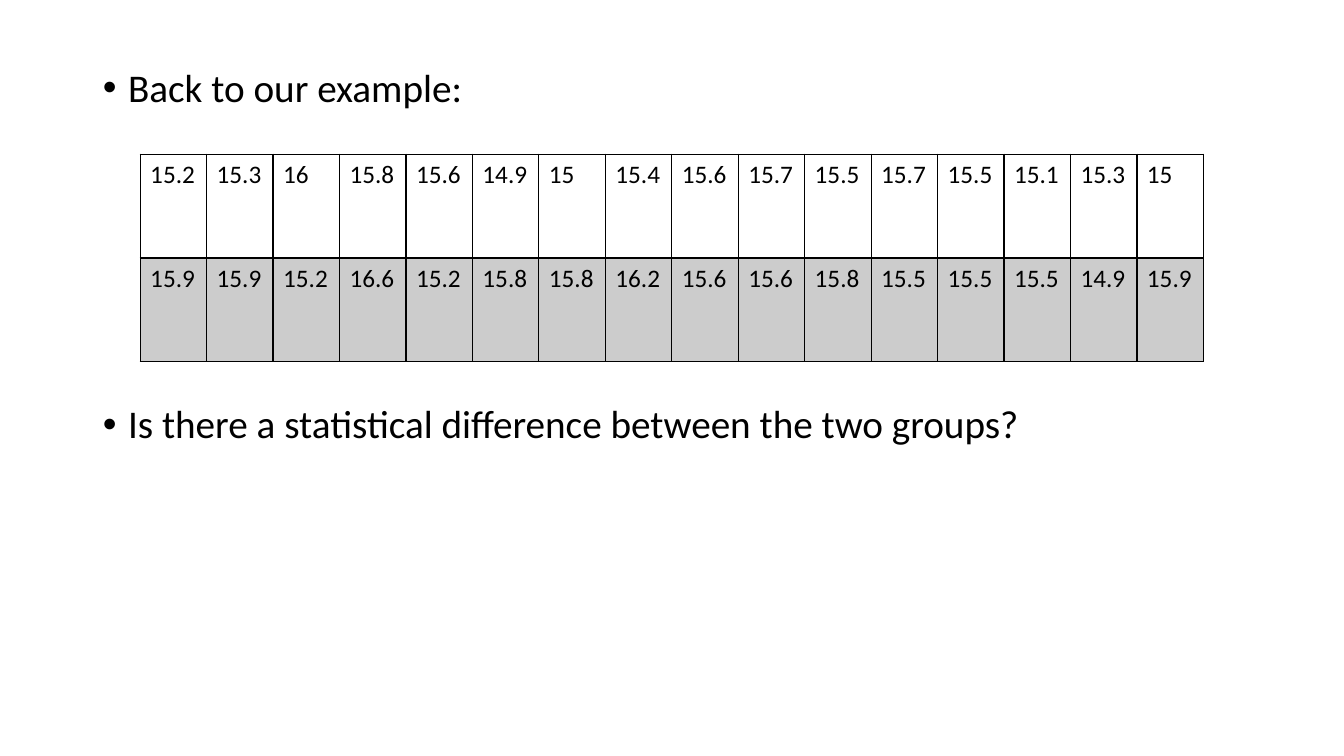
from dataclasses import dataclass

from lxml.etree import SubElement
from pptx import Presentation
from pptx.dml.color import RGBColor
from pptx.enum.text import MSO_ANCHOR, MSO_AUTO_SIZE
from pptx.oxml.ns import qn
from pptx.slide import Slide
from pptx.table import _Cell
from pptx.text.text import Font
from pptx.util import Inches, Pt

COLORS = {"text": "000000", "border": "000000", "shade": "000000"}
FONT_NAME = "Calibri"
SHADE_OPACITY = 20


@dataclass
class Bullet:
    text: str
    space_before: float


@dataclass
class Group:
    values: list[str]
    shaded: bool


# The large space before the second bullet leaves room for the table.
BULLETS = [
    Bullet("Back to our example:", 10),
    Bullet("Is there a statistical difference between the two groups?", 210),
]
GROUPS = [
    Group("15.2 15.3 16 15.8 15.6 14.9 15 15.4 15.6 15.7 15.5 15.7 15.5 15.1 15.3 15".split(), False),
    Group("15.9 15.9 15.2 16.6 15.2 15.8 15.8 16.2 15.6 15.6 15.8 15.5 15.5 15.5 14.9 15.9".split(), True),
]


def format_font(font: Font, size: float) -> None:
    font.name = FONT_NAME
    font.size = Pt(size)
    font.bold = False
    font.color.rgb = RGBColor.from_string(COLORS["text"])


def add_bullets(slide: Slide, bullets: list[Bullet]) -> None:
    body = slide.placeholders[1]
    body.left, body.top = Inches(0.92), Inches(0.63)
    body.width, body.height = Inches(11.5), Inches(6.12)
    text_frame = body.text_frame
    text_frame.text = "\n".join(bullet.text for bullet in bullets)
    text_frame.auto_size = MSO_AUTO_SIZE.NONE
    text_frame.vertical_anchor = MSO_ANCHOR.TOP
    for paragraph, bullet in zip(text_frame.paragraphs, bullets):
        paragraph.line_spacing = 0.9
        paragraph.space_before = Pt(bullet.space_before)
        properties = paragraph._p.get_or_add_pPr()
        properties.set("marL", str(Inches(0.25)))
        properties.set("indent", str(Inches(-0.25)))
        SubElement(properties, qn("a:buFont"), typeface="Arial")
        SubElement(properties, qn("a:buChar"), char="•")
        format_font(paragraph.runs[0].font, 28)


def add_borders(cell: _Cell) -> None:
    properties = cell._tc.get_or_add_tcPr()
    for side in ("lnL", "lnR", "lnT", "lnB"):
        line = SubElement(properties, qn(f"a:{side}"), w=str(Pt(1)))
        fill = SubElement(line, qn("a:solidFill"))
        SubElement(fill, qn("a:srgbClr"), val=COLORS["border"])


def fill_cell(cell: _Cell, shaded: bool) -> None:
    """Give a shaded cell a translucent fill and any other cell none."""
    if not shaded:
        cell.fill.background()
        return
    cell.fill.solid()
    cell.fill.fore_color.rgb = RGBColor.from_string(COLORS["shade"])
    color = cell._tc.tcPr.find(f"{qn('a:solidFill')}/{qn('a:srgbClr')}")
    SubElement(color, qn("a:alpha"), val=str(SHADE_OPACITY * 1000))


def add_group_table(slide: Slide, groups: list[Group]) -> None:
    table = slide.shapes.add_table(
        len(groups), len(groups[0].values),
        Inches(1.39), Inches(1.53), Inches(10.55), Inches(2.06),
    ).table
    table.first_row = False
    table.horz_banding = False
    for row, group in zip(table.rows, groups):
        for cell, value in zip(row.cells, group.values):
            cell.text_frame.text = value
            format_font(cell.text_frame.paragraphs[0].runs[0].font, 18)
            add_borders(cell)
            fill_cell(cell, group.shaded)


def main() -> None:
    presentation = Presentation()
    presentation.slide_width = Inches(13.33)
    presentation.slide_height = Inches(7.5)
    slide = presentation.slides.add_slide(presentation.slide_layouts[1])
    title = slide.shapes.title.element
    title.getparent().remove(title)
    add_bullets(slide, BULLETS)
    add_group_table(slide, GROUPS)
    presentation.save("out.pptx")


if __name__ == "__main__":
    main()
